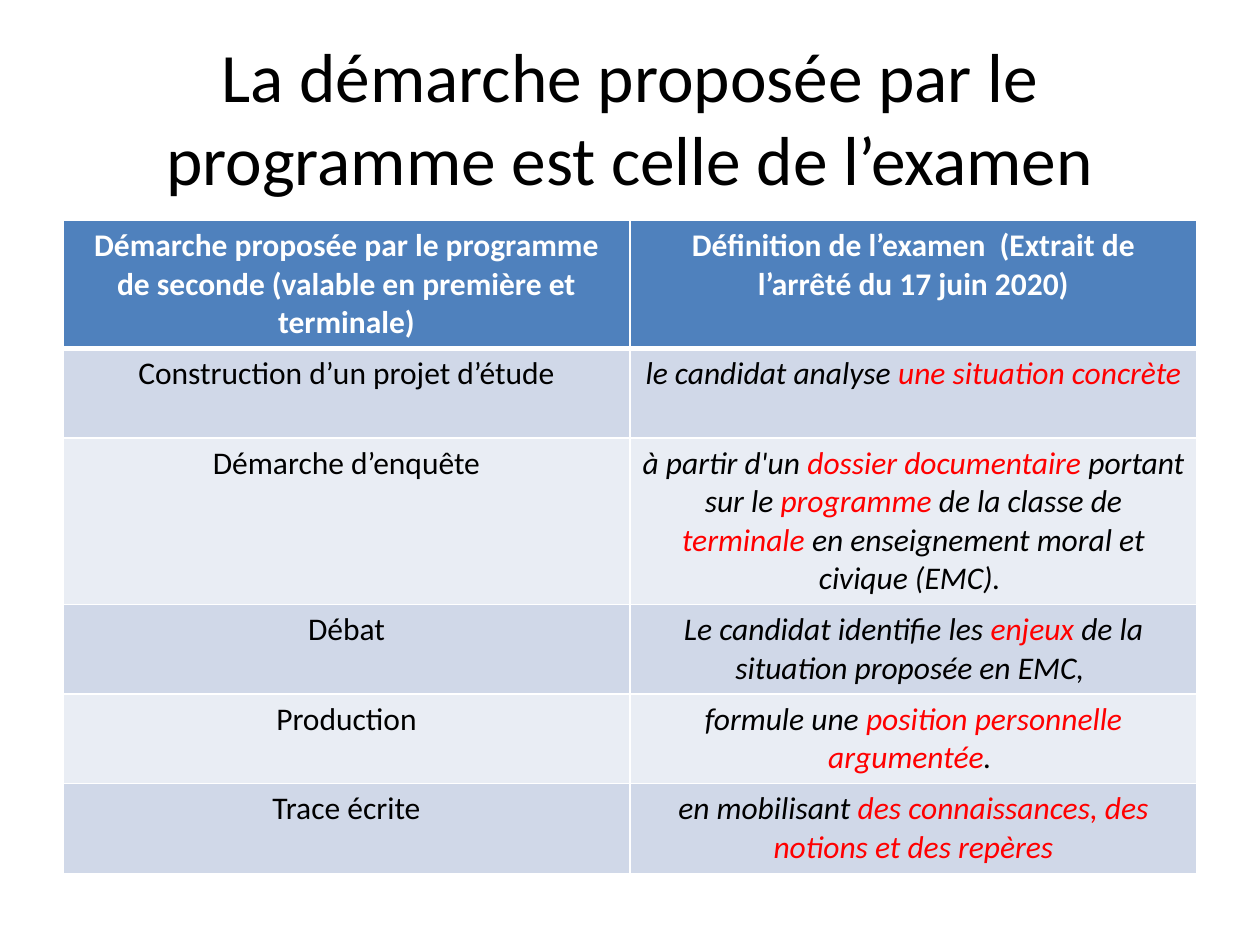
import dataclasses

import lxml.etree
import pptx
import pptx.dml.color
import pptx.enum.text
import pptx.oxml.ns
import pptx.util

FONT = "Calibri"
BLACK, WHITE, RED = "000000", "FFFFFF", "FF0000"
HEADER_FILL = "4F81BD"
BAND_FILLS = ("D0D8E8", "E9EDF4")
LEFT, WIDTH = 36, 648


@dataclasses.dataclass(frozen=True)
class Step:
    approach: str
    exam: tuple[str, ...]
    height: float


HEADERS = (
    "Démarche proposée par le programme de seconde (valable en première et terminale)",
    "Définition de l’examen  (Extrait de l’arrêté du 17 juin 2020)",
)
HEADER_HEIGHT = 72.5
# Exam
STEPS = (
    Step("Construction d’un projet d’étude",
         ("le candidat analyse ", "une situation concrète "), 51.2),
    Step("Démarche d’enquête",
         ("à partir d'un ", "dossier documentaire ", "portant sur le ", "programme",
          " de la classe de ", "terminale",
          " en enseignement moral et civique (EMC). "), 95),
    Step("Débat",
         ("Le candidat identifie les ", "enjeux",
          " de la situation proposée en EMC, "), 51.2),
    Step("Production",
         ("formule une ", "position personnelle argumentée", ". "), 51.2),
    Step("Trace écrite",
         ("en mobilisant ", "des connaissances, des notions et des repères"), 51.2),
)


def rgb(value: str) -> pptx.dml.color.RGBColor:
    return pptx.dml.color.RGBColor.from_string(value)


def add_text(paragraph, text: str, *, size: float = 18, color: str = BLACK,
             bold: bool = False, italic: bool = False) -> None:
    paragraph.alignment = pptx.enum.text.PP_ALIGN.CENTER
    run = paragraph.add_run()
    run.text = text
    run.font.name = FONT
    run.font.size = pptx.util.Pt(size)
    run.font.bold = bold
    run.font.italic = italic
    run.font.color.rgb = rgb(color)


def format_cell(cell, fill: str, top: float = 1, bottom: float = 1) -> None:
    cell.fill.solid()
    cell.fill.fore_color.rgb = rgb(fill)
    properties = cell._tc.get_or_add_tcPr()
    qn = pptx.oxml.ns.qn
    sides = {"L": 1, "R": 1, "T": top, "B": bottom}
    for index, (side, width) in enumerate(sides.items()):
        line = lxml.etree.Element(qn(f"a:ln{side}"), w=str(pptx.util.Pt(width)))
        solid = lxml.etree.SubElement(line, qn("a:solidFill"))
        lxml.etree.SubElement(solid, qn("a:srgbClr"), val=WHITE)
        properties.insert(index, line)


def add_title(slide, text: str) -> None:
    title = slide.shapes.title
    title.left, title.top, title.width, title.height = map(
        pptx.util.Pt, (LEFT, 21.6, WIDTH, 90))
    frame = title.text_frame
    frame.word_wrap = True
    frame.auto_size = pptx.enum.text.MSO_AUTO_SIZE.NONE
    frame.vertical_anchor = pptx.enum.text.MSO_ANCHOR.MIDDLE
    add_text(frame.paragraphs[0], text, size=39.6)


def add_comparison(slide, headers: tuple[str, ...], steps: tuple[Step, ...]) -> None:
    heights = [HEADER_HEIGHT, *(step.height for step in steps)]
    table = slide.shapes.add_table(
        len(heights), len(headers), pptx.util.Pt(LEFT), pptx.util.Pt(126),
        pptx.util.Pt(WIDTH), pptx.util.Pt(sum(heights))).table
    for row, height in zip(table.rows, heights):
        row.height = pptx.util.Pt(height)
    for column, header in enumerate(headers):
        cell = table.cell(0, column)
        format_cell(cell, HEADER_FILL, bottom=3)
        add_text(cell.text_frame.paragraphs[0], header, color=WHITE, bold=True)
    for index, step in enumerate(steps):
        approach, exam = table.rows[index + 1].cells
        for cell in (approach, exam):
            format_cell(cell, BAND_FILLS[index % 2], top=1 if index else 3)
        add_text(approach.text_frame.paragraphs[0], step.approach)
        for position, part in enumerate(step.exam):
            add_text(exam.text_frame.paragraphs[0], part, italic=True,
                     color=RED if position % 2 else BLACK)


def main() -> None:
    presentation = pptx.Presentation()
    presentation.slide_width = pptx.util.Pt(720)
    presentation.slide_height = pptx.util.Pt(540)
    slide = presentation.slides.add_slide(presentation.slide_layouts[5])
    add_title(slide, "La démarche proposée par le programme est celle de l’examen")
    add_comparison(slide, HEADERS, STEPS)
    presentation.save("out.pptx")


if __name__ == "__main__":
    main()
